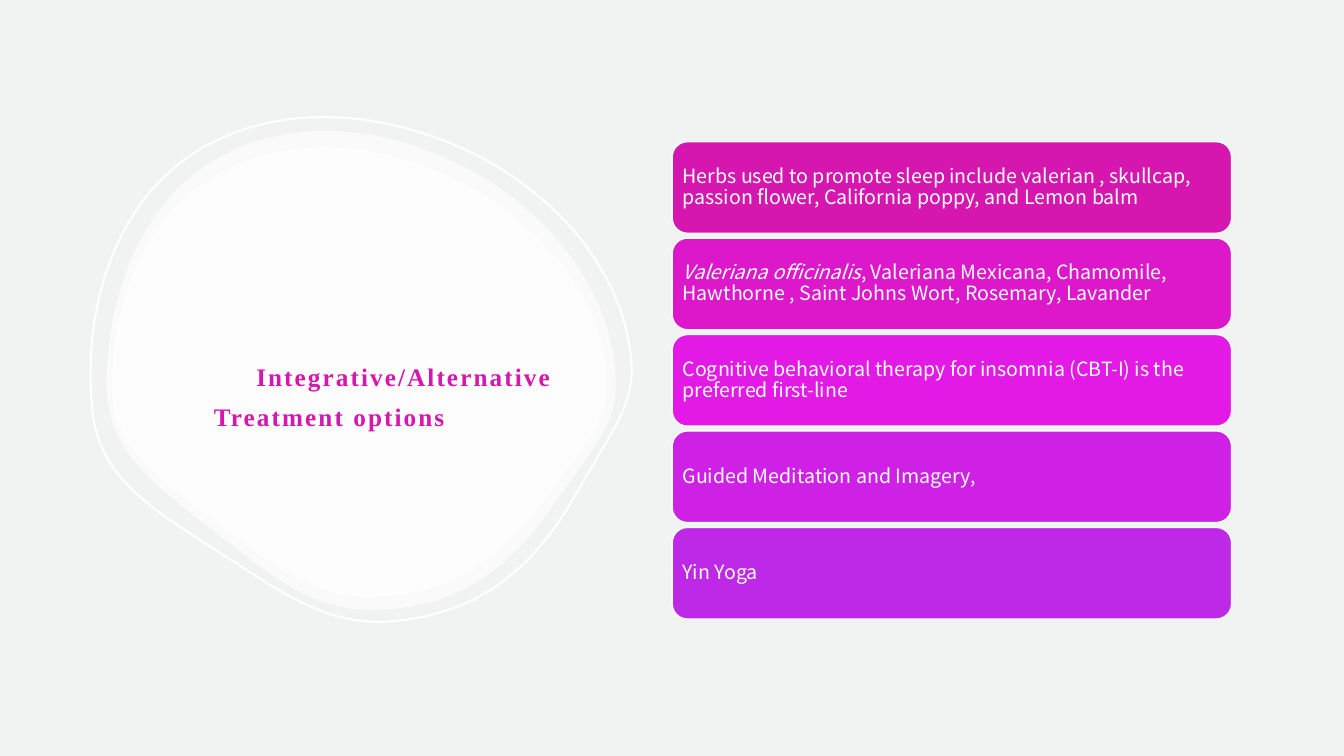
from lxml import etree
from pptx import Presentation
from pptx import util as u
from pptx.dml.color import RGBColor
from pptx.enum import shapes, text
from pptx.oxml.ns import qn

COLOURS = {
    "background": "F0F3F2",
    "white": "FFFFFF",
    "title": "D517AF",
}
BODY_FONT = "Noto Sans CJK JP"
TITLE_FONT = "Times New Roman"

# Blob outline on a 505 x 475 grid: a start point, then cubic curves
GRID = (505, 475)
START = (216, 0)
CURVES = [
    ((183, 0), (152, 7), (125, 19)),
    ((100, 31), (77, 48), (59, 70)),
    ((21, 116), (0, 180), (0, 252)),
    ((0, 280), (8, 303), (26, 326)),
    ((45, 350), (74, 372), (104, 395)),
    ((109, 399), (115, 404), (121, 408)),
    ((172, 449), (210, 475), (261, 475)),
    ((339, 475), (395, 443), (446, 367)),
    ((453, 357), (460, 348), (466, 339)),
    ((492, 303), (505, 284), (505, 252)),
    ((505, 220), (497, 188), (481, 158)),
    ((466, 128), (444, 101), (416, 77)),
    ((389, 53), (356, 34), (322, 21)),
    ((287, 7), (251, 0), START),
]

# Card fill and its runs as (words, italic)
CARDS = [
    ("D517AF", [("Herbs used to promote sleep include valerian , skullcap, "
                 "passion flower, California poppy, and Lemon balm", False)]),
    ("DD18CA", [("Valeriana officinalis", True),
                (", Valeriana Mexicana, Chamomile, Hawthorne , Saint Johns Wort, "
                 "Rosemary, Lavander", False)]),
    ("E319E5", [("Cognitive behavioral therapy for insomnia (CBT-I) is the "
                 "preferred first-line", False)]),
    ("CF21E6", [("Guided Meditation and Imagery,", False)]),
    ("BD29E7", [("Yin Yoga", False)]),
]
CARD_TOP, CARD_PITCH = 3.57, 2.43


def rgb(value):
    return RGBColor.from_string(value)


def add_blob(page, left, top, width, height):
    def place(point):
        return (u.Cm(point[0] * width / GRID[0]),
                u.Cm(point[1] * height / GRID[1]))

    builder = page.shapes.build_freeform(*place(START))
    builder.add_line_segments([place(curve[-1]) for curve in CURVES])
    blob = builder.convert_to_shape(u.Cm(left), u.Cm(top))
    blob.shadow.inherit = False

    # Turn each straight segment into its cubic curve
    segments = list(blob._element.iter(qn("a:lnTo")))
    for segment, curve in zip(segments, CURVES):
        bend = etree.Element(qn("a:cubicBezTo"))
        for x, y in map(place, curve):
            etree.SubElement(bend, qn("a:pt"), x=str(x), y=str(y))
        segment.getparent().replace(segment, bend)
    return blob


def add_filled_blob(page, *frame):
    blob = add_blob(page, *frame)
    blob.fill.solid()
    blob.fill.fore_color.rgb = rgb(COLOURS["white"])
    colour = blob.fill._xPr.find(qn("a:solidFill"))[0]
    etree.SubElement(colour, qn("a:alpha"), val="60000")
    blob.line.fill.background()


def add_ring(page, *frame):
    ring = add_blob(page, *frame)
    ring.rotation = -5
    ring.fill.background()
    ring.line.color.rgb = rgb(COLOURS["white"])
    ring.line.width = u.Pt(1.5)


def set_frame(box, left, top, right, bottom):
    frame = box.text_frame
    frame.word_wrap = True
    frame.vertical_anchor = text.MSO_ANCHOR.MIDDLE
    frame.margin_left, frame.margin_top = u.Cm(left), u.Cm(top)
    frame.margin_right, frame.margin_bottom = u.Cm(right), u.Cm(bottom)
    para = frame.paragraphs[0]
    para.alignment = text.PP_ALIGN.LEFT
    return para


def add_span(para, words, font, size, colour):
    span = para.add_run()
    span.text = words
    span.font.name = font
    span.font.size = u.Pt(size)
    span.font.color.rgb = rgb(colour)
    return span


def add_title(page, words):
    box = page.shapes.add_textbox(u.Cm(5.08), u.Cm(5.28), u.Cm(9.19), u.Cm(8.15))
    para = set_frame(box, 0.31, 1.25, 0.3, 0.25)
    para.line_spacing = u.Pt(28.6)
    # First-line indent and letter spacing
    para._p.get_or_add_pPr().set("indent", str(u.Cm(1.07)))
    span = add_span(para, words, TITLE_FONT, 18, COLOURS["title"])
    span.font.bold = True
    span._r.get_or_add_rPr().set("spc", "150")


def add_card(page, top, fill, runs):
    card = page.shapes.add_shape(shapes.MSO_SHAPE.ROUNDED_RECTANGLE,
                                 u.Cm(16.94), u.Cm(top), u.Cm(14.1), u.Cm(2.31))
    card.shadow.inherit = False
    card.fill.solid()
    card.fill.fore_color.rgb = rgb(fill)
    card.line.color.rgb = rgb(COLOURS["white"])
    card.line.width = u.Pt(1)
    para = set_frame(card, 0.15, 0.15, 0.15, 0.15)
    para.line_spacing = 0.9
    for words, italic in runs:
        add_span(para, words, BODY_FONT, 14, COLOURS["white"]).font.italic = italic


def main():
    deck = Presentation()
    deck.slide_width, deck.slide_height = u.Cm(33.87), u.Cm(19.05)
    page = deck.slides.add_slide(deck.slide_layouts[6])
    page.background.fill.solid()
    page.background.fill.fore_color.rgb = rgb(COLOURS["background"])

    # Blobs behind the title
    add_filled_blob(page, 2.69, 3.3, 12.83, 12.07)
    add_filled_blob(page, 2.82, 3.71, 12.47, 11.33)
    add_ring(page, 2.26, 2.87, 13.64, 12.83)

    add_title(page, "Integrative/Alternative Treatment options")

    # Column of cards
    for index, (fill, runs) in enumerate(CARDS):
        add_card(page, CARD_TOP + index * CARD_PITCH, fill, runs)

    deck.save("out.pptx")


if __name__ == "__main__":
    main()
